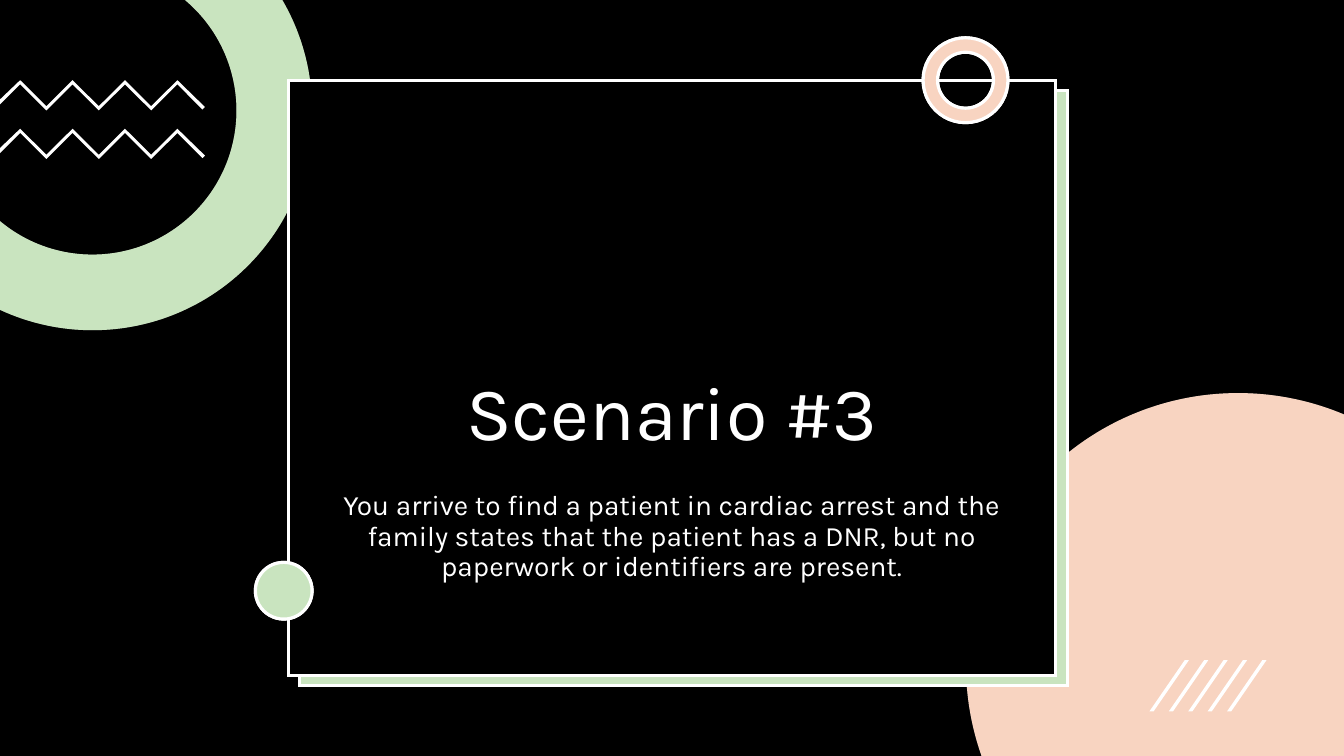
from math import acos, asin, ceil, cos, floor, pi, sin, tan

from lxml import etree
from pptx import Presentation
from pptx import util as u
from pptx.dml.color import RGBColor
from pptx.enum import shapes, text
from pptx.oxml.ns import qn

BLACK = RGBColor(0x00, 0x00, 0x00)
WHITE = RGBColor(0xFF, 0xFF, 0xFF)
GREEN = RGBColor(0x4E, 0xA7, 0x2E)
PEACH = RGBColor(0xE9, 0x71, 0x32)
COLS, ROWS = 160, 90
CELL = u.Inches(1 / 12)
KIND = shapes.MSO_SHAPE


def write(frame, words, size=20, color=WHITE, font="Karla",
          align=text.PP_ALIGN.CENTER, anchor=text.MSO_ANCHOR.TOP):
    frame.word_wrap = True
    frame.auto_size = text.MSO_AUTO_SIZE.NONE
    frame.vertical_anchor = anchor
    para = frame.paragraphs[0]
    para.text = words
    props = para._p.get_or_add_pPr()
    props.set("marL", "0")
    props.set("indent", "0")
    etree.SubElement(props, qn("a:buNone"))
    para.alignment = align
    para.line_spacing = 0.9
    para.space_before = u.Pt(0)
    style = para.runs[0].font
    style.size, style.name = u.Pt(size), font
    style.color.rgb = color


def arc(x, y, r, start, end):
    """Steps along a circle: a first point, then one curve per quadrant."""
    low, high = sorted((start, end))
    cuts = [n * pi / 2 for n in range(ceil(low * 2 / pi),
                                      floor(high * 2 / pi) + 1)]
    turns = sorted([low, *cuts, high], reverse=end < start)
    steps = [[(x + r * cos(start), y + r * sin(start))]]
    for a, b in zip(turns, turns[1:]):
        k = 4 / 3 * tan((b - a) / 4)
        steps.append([(x + r * (cos(a) - k * sin(a)),
                       y + r * (sin(a) + k * cos(a))),
                      (x + r * (cos(b) + k * sin(b)),
                       y + r * (sin(b) - k * cos(b))),
                      (x + r * cos(b), y + r * sin(b))])
    return steps


def bend(shape, steps):
    """Turn each step of three points into one curve."""
    lines = iter(list(shape._element.iter(qn("a:lnTo"))))
    for step in steps[1:]:
        first, *rest = [next(lines) for _ in step]
        if rest:
            first.tag = qn("a:cubicBezTo")
            for line in rest:
                first.append(line[0])
                line.getparent().remove(line)


class Page:
    """Draws on one slide, in columns and rows of the grid."""

    def __init__(self, deck):
        self.slide = deck.slides.add_slide(deck.slide_layouts[1])
        self.items = self.slide.shapes

    def paint(self, shape, fill, line=False, alpha=None):
        shape.shadow.inherit = False
        shape.fill.solid()
        shape.fill.fore_color.rgb = fill
        if alpha:
            tone = shape._element.spPr.find(qn("a:solidFill"))[0]
            etree.SubElement(tone, qn("a:alpha")).set("val", str(alpha * 1000))
        if line:
            shape.line.color.rgb = WHITE
            shape.line.width = u.Pt(2.25)
            edge = shape._element.spPr.find(qn("a:ln"))
            etree.SubElement(edge, qn("a:miter")).set("lim", "800000")
        else:
            shape.line.fill.background()

    def preset(self, kind, box, fill, hole=None, **look):
        shape = self.items.add_shape(kind, *(round(n * CELL) for n in box))
        if hole:
            shape.adjustments[0] = hole
        self.paint(shape, fill, **look)

    def outline(self, steps, fill, group=None, **look):
        spots = [(round(x * CELL), round(y * CELL))
                 for step in steps for x, y in step]
        home = group.shapes if group else self.items
        pen = home.build_freeform(*spots[0])
        pen.add_line_segments(spots[1:], close=True)
        shape = pen.convert_to_shape()
        bend(shape, steps)
        self.paint(shape, fill, **look)

    def tint(self, draw, *args, color, **look):
        """A white base with a pale colour over it."""
        draw(*args, fill=WHITE, **look)
        draw(*args, fill=color, alpha=30, **look)

    def label(self, index, box, words, **look):
        holder = self.slide.placeholders[index]
        holder.left, holder.top, holder.width, holder.height = (
            round(n * CELL) for n in box)
        write(holder.text_frame, words, **look)
        # Bring the text in front of what is drawn so far
        self.items._spTree.append(holder._element)

    def zigzag(self, top):
        upper = [(2.4 + 3.12 * i, top + 3.1 * (i % 2)) for i in range(7)]
        lower = [(x, y + 0.5) for x, y in reversed(upper)]
        tip = [(24.4, top + 3.2), (24.1, top + 3.5)]
        edge = [(0, top + 2.9), (0, top + 2.3)]
        self.outline([[p] for p in upper + tip + lower + edge], WHITE)

    def slashes(self, left, top, count, gap):
        group = self.items.add_group_shape()
        for i in range(count):
            x = left + i * gap
            self.outline([[(x + 0.5, top + 6.1)], [(x, top + 6.1)],
                          [(x + 4.2, top)], [(x + 4.7, top)]],
                         WHITE, group=group)


def main():
    deck = Presentation()
    deck.slide_width, deck.slide_height = COLS * CELL, ROWS * CELL
    page = Page(deck)

    # Backdrop
    page.preset(KIND.RECTANGLE, (0, 0, COLS, ROWS), BLACK)

    # Green ring, cut by the top and left edges
    x, y, big, small = 11, 13.15, 26.16, 17.16
    ring = (arc(x, y, big, -asin(y / big), acos(-x / big))
            + arc(x, y, small, acos(-x / small), -asin(y / small)))
    page.tint(page.outline, ring, color=GREEN)

    # Peach disc, cut by the bottom and right edges
    x, y, r = 147.4, 79.2, 32.4
    disc = arc(x, y, r, pi - asin((ROWS - y) / r),
               2 * pi - acos((COLS - x) / r))
    page.tint(page.outline, disc + [[(COLS, ROWS)]], color=PEACH)

    # Card and its offset back
    page.tint(page.preset, KIND.RECTANGLE, (35.7, 10.75, 91.4, 70.9),
              color=GREEN, line=True)
    page.preset(KIND.RECTANGLE, (34.3, 9.55, 91.4, 70.9), BLACK, line=True)

    # Title and body
    page.label(0, (37.87, 19.7, 84.25, 35.3), "Scenario #3", size=54,
               anchor=text.MSO_ANCHOR.BOTTOM)
    page.label(1, (37.87, 57.93, 84.25, 13.3),
               "You arrive to find a patient in cardiac arrest and the family "
               "states that the patient has a DNR, but no paperwork or "
               "identifiers are present.")

    # Ornaments
    page.zigzag(9.55)
    page.tint(page.preset, KIND.DONUT, (109.9, 4.5, 10.1, 10.1),
              color=PEACH, line=True, hole=0.17)
    page.zigzag(15.33)
    page.tint(page.preset, KIND.OVAL, (30.4, 66.95, 6.75, 6.75),
              color=GREEN, line=True)
    page.slashes(136.83, 78.6, 5, 2.31)

    deck.save("out.pptx")


if __name__ == "__main__":
    main()
